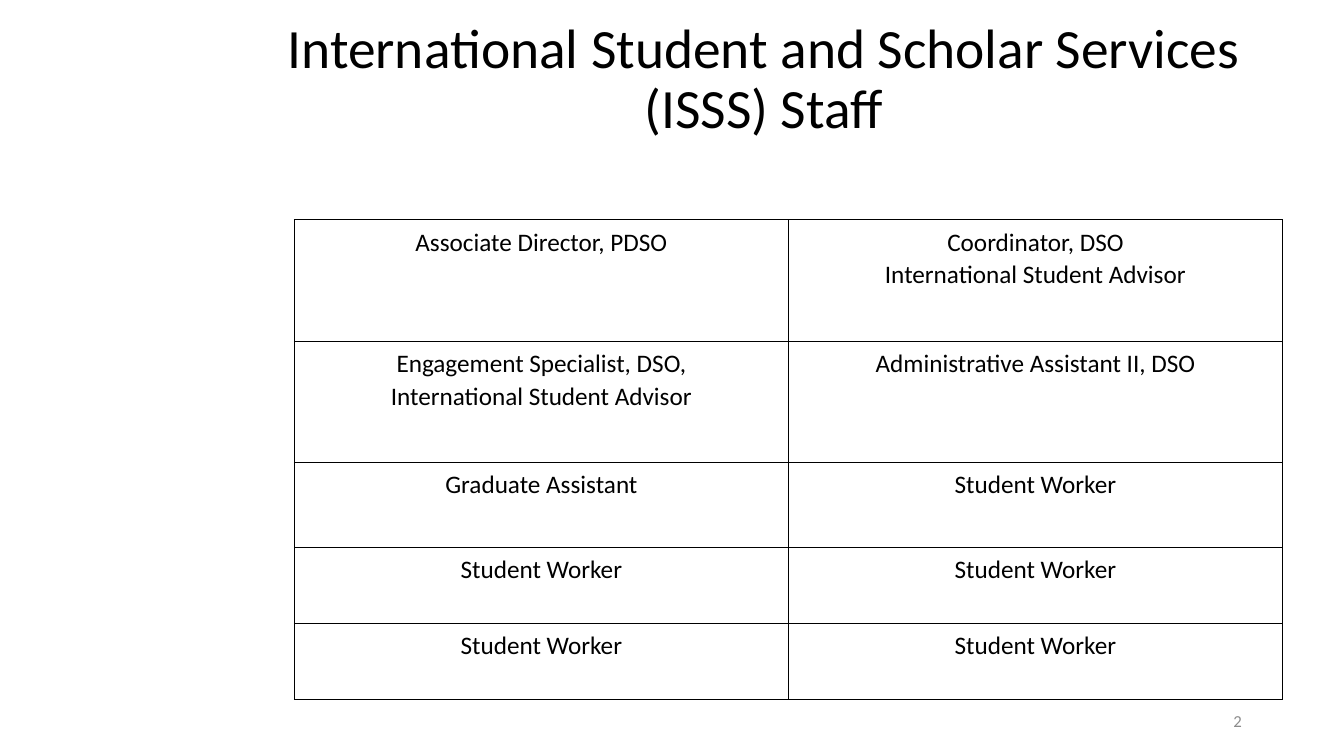
"""Build the staff overview slide of International Student and Scholar Services."""
import pptx
import pptx.dml.color
import pptx.enum.text
import pptx.oxml
import pptx.oxml.ns
import pptx.util

Cm = pptx.util.Cm
Align = pptx.enum.text.PP_ALIGN

TITLE = "International Student and Scholar Services (ISSS) Staff"
PAGE_NUMBER = "2"
STAFF = [
    (["Associate Director, PDSO"],
     ["Coordinator, DSO", "International Student Advisor"]),
    (["Engagement Specialist, DSO,", "International Student Advisor"],
     ["Administrative Assistant II, DSO"]),
    (["Graduate Assistant"], ["Student Worker"]),
    (["Student Worker"], ["Student Worker"]),
    (["Student Worker"], ["Student Worker"]),
]
ROW_HEIGHTS = [3.06, 3.06, 2.13, 1.92, 1.92]
COLUMN_WIDTH = 12.45
BLACK, GRAY = "000000", "8C8C8C"


def color(value):
    return pptx.dml.color.RGBColor.from_string(value)


def write(frame, lines, size, ink, align, spacing):
    frame.word_wrap = True
    for index, line in enumerate(lines):
        para = frame.add_paragraph() if index else frame.paragraphs[0]
        para.text = line
        para.alignment = align
        para.line_spacing = spacing
        para.font.name = "Calibri"
        para.font.size = pptx.util.Pt(size)
        para.font.color.rgb = color(ink)


def add_text(page, place, line, size, ink, align, spacing):
    box = page.shapes.add_textbox(*map(Cm, place))
    box.text_frame.vertical_anchor = pptx.enum.text.MSO_ANCHOR.MIDDLE
    write(box.text_frame, [line], size, ink, align, spacing)


def add_borders(cell):
    properties = cell._tc.get_or_add_tcPr()
    for index, side in enumerate(("lnL", "lnR", "lnT", "lnB")):
        properties.insert(index, pptx.oxml.parse_xml(
            f'<a:{side} {pptx.oxml.ns.nsdecls("a")} w="12700"><a:solidFill>'
            f'<a:srgbClr val="{BLACK}"/></a:solidFill></a:{side}>'))


def add_staff_table(page):
    table = page.shapes.add_table(
        len(STAFF), 2, Cm(7.42), Cm(5.54),
        Cm(2 * COLUMN_WIDTH), Cm(sum(ROW_HEIGHTS))).table
    table.first_row = table.horz_banding = False
    for column in table.columns:
        column.width = Cm(COLUMN_WIDTH)
    for row, height, roles in zip(table.rows, ROW_HEIGHTS, STAFF):
        row.height = Cm(height)
        for cell, lines in zip(row.cells, roles):
            cell.fill.background()
            add_borders(cell)
            write(cell.text_frame, lines, 18, BLACK, Align.CENTER, 1.07)


def main():
    deck = pptx.Presentation()
    deck.slide_width, deck.slide_height = Cm(33.87), Cm(19.05)
    page = deck.slides.add_slide(deck.slide_layouts[6])
    add_text(page, (6.55, 0.43, 25.4, 3.18), TITLE, 39.6, BLACK, Align.CENTER, 0.9)
    add_text(page, (23.93, 17.65, 7.62, 1.02), PAGE_NUMBER, 12, GRAY, Align.RIGHT, 1.0)
    add_staff_table(page)
    deck.save("out.pptx")


if __name__ == "__main__":
    main()
